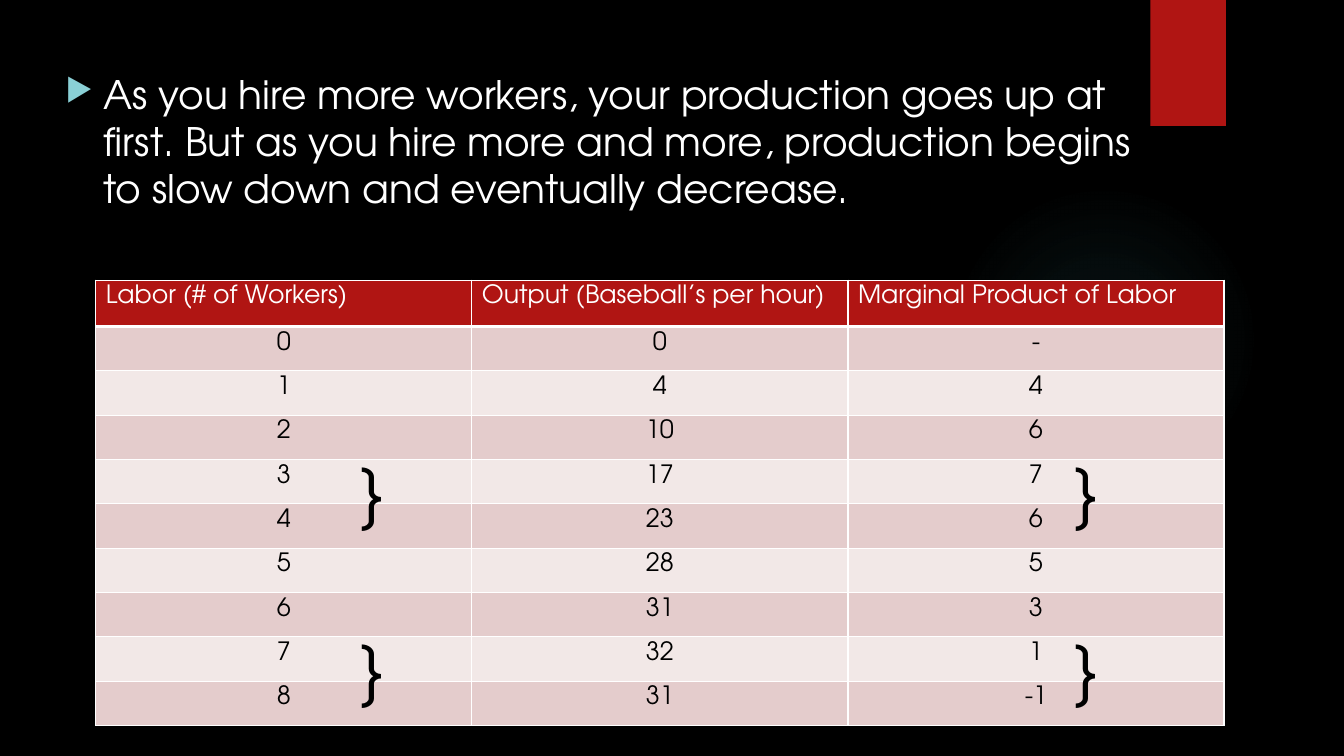
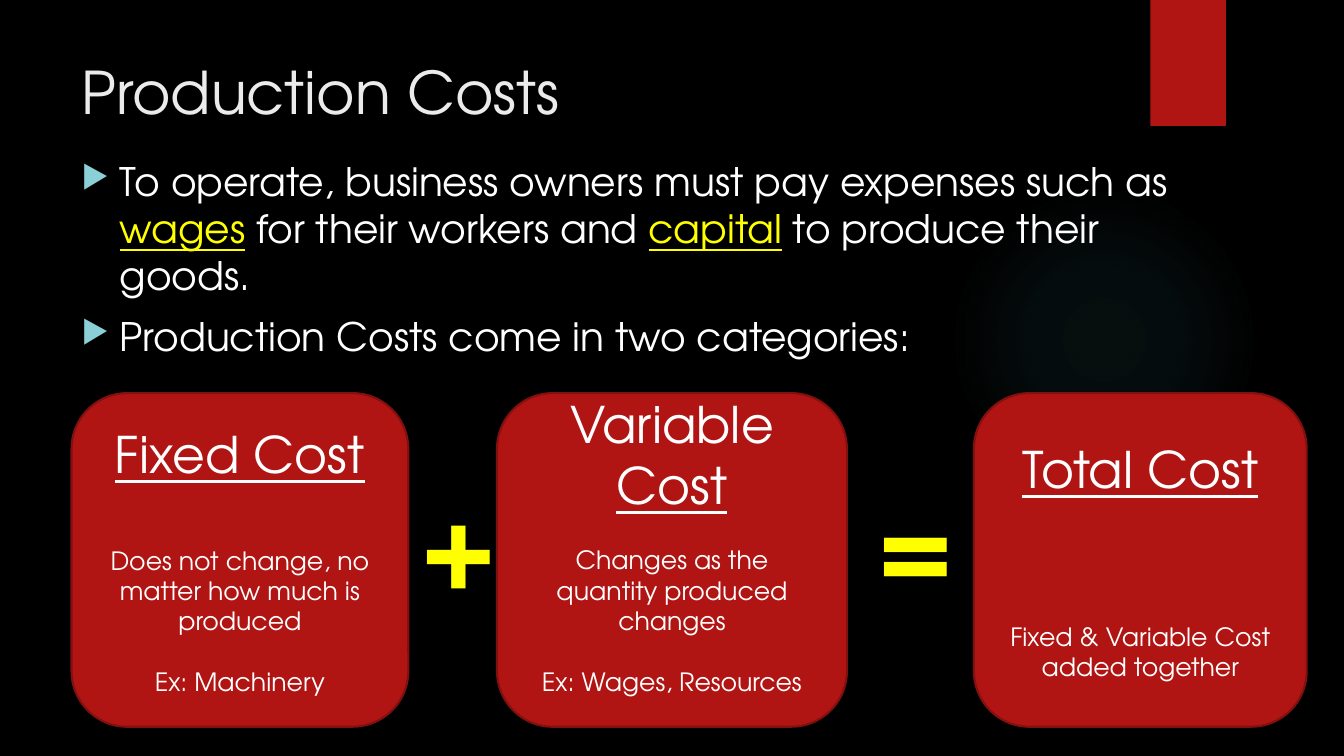
from lxml import etree
from pptx import Presentation
from pptx.dml.color import RGBColor
from pptx.enum.shapes import MSO_SHAPE
from pptx.enum.text import MSO_ANCHOR, PP_ALIGN
from pptx.oxml import parse_xml
from pptx.oxml.ns import qn
from pptx.util import Inches, Pt

CENTER = PP_ALIGN.CENTER
LEFT = PP_ALIGN.LEFT
MIDDLE = MSO_ANCHOR.MIDDLE
OVAL = MSO_SHAPE.OVAL
RECTANGLE = MSO_SHAPE.RECTANGLE
ROUNDED = MSO_SHAPE.ROUNDED_RECTANGLE

FONT = "TeX Gyre Adventor"
NAMESPACE = "http://schemas.openxmlformats.org/drawingml/2006/main"
COLORS = {
    "black": "000000",
    "white": "FFFFFF",
    "title": "EBEBEB",
    "red": "B01513",
    "outline": "82100E",
    "yellow": "FFFF00",
    "bullet": "8AD0D6",
    "glow": "50B9C1",
    "dark_row": "E4CCCC",
    "light_row": "F2E8E7",
}


def rgb(name):
    return RGBColor.from_string(COLORS[name])


def write(frame, *runs, size=18, color="white", bold=False, align=LEFT, before=0, bullet=False, new=False):
    paragraph = frame.add_paragraph() if new else frame.paragraphs[0]
    paragraph.alignment = align
    if new:
        paragraph.space_before = Pt(before)
    if bullet:
        properties = paragraph._p.get_or_add_pPr()
        properties.set("marL", str(Inches(0.38)))
        properties.set("indent", str(-Inches(0.38)))
        bullet_color = etree.SubElement(properties, qn("a:buClr"))
        etree.SubElement(bullet_color, qn("a:srgbClr"), val=COLORS["bullet"])
        etree.SubElement(properties, qn("a:buSzPct"), val="80000")
        etree.SubElement(properties, qn("a:buChar"), char="▶")
    for text, run_format in runs:
        run = paragraph.add_run()
        run.text = text
        run.font.name = FONT
        run.font.size = Pt(size)
        run.font.bold = bold
        run.font.underline = run_format.get("underline", False)
        run.font.color.rgb = rgb(run_format.get("color", color))


presentation = Presentation()
presentation.slide_width = Inches(13.33)
presentation.slide_height = Inches(7.5)

slides = []
for _ in range(2):
    slide = presentation.slides.add_slide(presentation.slide_layouts[6])
    slide.background.fill.solid()
    slide.background.fill.fore_color.rgb = rgb("black")

    glow = slide.shapes.add_shape(OVAL, Inches(9.41), Inches(1.83), Inches(3.08), Inches(3.08))
    glow.shadow.inherit = False
    glow.line.fill.background()
    stops = "".join(
        f'<a:gs pos="{position}000"><a:srgbClr val="{COLORS["glow"]}"><a:alpha val="{alpha}000"/></a:srgbClr></a:gs>'
        for position, alpha in ((0, 7), (36, 6), (69, 0))
    )
    glow._element.spPr.find(qn("a:prstGeom")).addnext(parse_xml(
        f'<a:gradFill xmlns:a="{NAMESPACE}"><a:gsLst>{stops}</a:gsLst><a:path path="circle">'
        '<a:fillToRect l="50000" t="50000" r="50000" b="50000"/></a:path></a:gradFill>'
    ))

    ribbon = slide.shapes.add_shape(RECTANGLE, Inches(11.41), 0, Inches(0.75), Inches(1.25))
    ribbon.shadow.inherit = False
    ribbon.fill.solid()
    ribbon.fill.fore_color.rgb = rgb("red")
    ribbon.line.fill.background()
    slides.append(slide)

labor_slide, cost_slide = slides

boxes = [
    (labor_slide, 0.55, 0.65, 10.86, 1.7, {"size": 28, "bullet": True}, [
        [("As you hire more workers, your production goes up at first. But as you hire more and more, "
          "production begins to slow down and eventually decrease.", {})],
    ]),
    (cost_slide, 0.71, 0.5, 10.29, 0.9, {"size": 42, "color": "title"}, [[("Production Costs", {})]]),
    (cost_slide, 0.71, 1.51, 11.55, 2.3, {"size": 28, "bullet": True, "before": 10}, [
        [
            ("To operate, business owners must pay expenses such as ", {}),
            ("wages", {"color": "yellow", "underline": True}),
            (" for their workers and ", {}),
            ("capital", {"color": "yellow", "underline": True}),
            (" to produce their goods.", {}),
        ],
        [("Production Costs come in two categories:", {})],
    ]),
]

rows = [
    ("Labor (# of Workers)", "Output (Baseball’s per hour)", "Marginal Product of Labor"),
    ("0", "0", "-"),
    ("1", "4", "4"),
    ("2", "10", "6"),
    ("3", "17", "7"),
    ("4", "23", "6"),
    ("5", "28", "5"),
    ("6", "31", "3"),
    ("7", "32", "1"),
    ("8", "31", "-1"),
]
table = labor_slide.shapes.add_table(
    len(rows), 3, Inches(0.95), Inches(2.78), Inches(11.2), Inches(4.42)
).table
for column in table.columns:
    column.width = Inches(3.73)
for row_index, values in enumerate(rows):
    header = row_index == 0
    table.rows[row_index].height = Inches(0.46 if header else 0.44)
    row_color = "red" if header else "dark_row" if row_index % 2 else "light_row"
    thick_side = {0: "lnB", 1: "lnT"}.get(row_index)
    for column_index, value in enumerate(values):
        cell = table.cell(row_index, column_index)
        cell_properties = cell._tc.get_or_add_tcPr()
        for side in ("lnL", "lnR", "lnT", "lnB"):
            width = Pt(3 if side == thick_side else 1)
            border = etree.SubElement(cell_properties, qn(f"a:{side}"), w=str(width))
            border_fill = etree.SubElement(border, qn("a:solidFill"))
            etree.SubElement(border_fill, qn("a:srgbClr"), val=COLORS["white"])
        cell.fill.solid()
        cell.fill.fore_color.rgb = rgb(row_color)
        write(cell.text_frame, (value, {}), color="white" if header else "black",
              align=LEFT if header else CENTER)

for top in (4.41, 6.16):
    for left in (3.47, 10.55):
        boxes.append((labor_slide, left, top, 0.6, 0.91, {"size": 48, "color": "black"}, [[("}", {})]]))

underlined = {"underline": True}
cards = [
    (0.71, 3.34, 0.05, [("Fixed Cost", underlined)], 43.5,
     ["Does not change, no matter how much is produced", "Ex: Machinery"]),
    (4.93, 3.47, 0.35, [("Variable ", {}), ("Cost", underlined)], 21.7,
     ["Changes as the quantity produced changes", "Ex: Wages, Resources"]),
    (9.66, 3.3, 0.05, [("Total Cost", underlined)], 87, ["Fixed & Variable Cost added together"]),
]
for left, width, bottom_margin, heading, heading_gap, details in cards:
    card = cost_slide.shapes.add_shape(ROUNDED, Inches(left), Inches(3.9), Inches(width), Inches(3.31))
    card.shadow.inherit = False
    card.fill.solid()
    card.fill.fore_color.rgb = rgb("red")
    card.line.color.rgb = rgb("outline")
    card.line.width = Pt(1.5)
    frame = card.text_frame
    frame.word_wrap = True
    frame.vertical_anchor = MIDDLE
    frame.margin_bottom = Inches(bottom_margin)
    write(frame, *heading, size=36, align=CENTER)
    for index, detail in enumerate(details):
        write(frame, (detail, {}), align=CENTER, before=21.7 if index else heading_gap, new=True)

for left, sign in ((4.05, "+"), (8.59, "=")):
    boxes.append((cost_slide, left, 4.65, 0.9, 1.45,
                  {"size": 80, "color": "yellow", "bold": True}, [[(sign, {})]]))

for slide, left, top, width, height, text_format, paragraphs in boxes:
    text_box = slide.shapes.add_textbox(Inches(left), Inches(top), Inches(width), Inches(height))
    text_box.text_frame.word_wrap = True
    for index, runs in enumerate(paragraphs):
        write(text_box.text_frame, *runs, new=index > 0, **text_format)

presentation.save("out.pptx")
